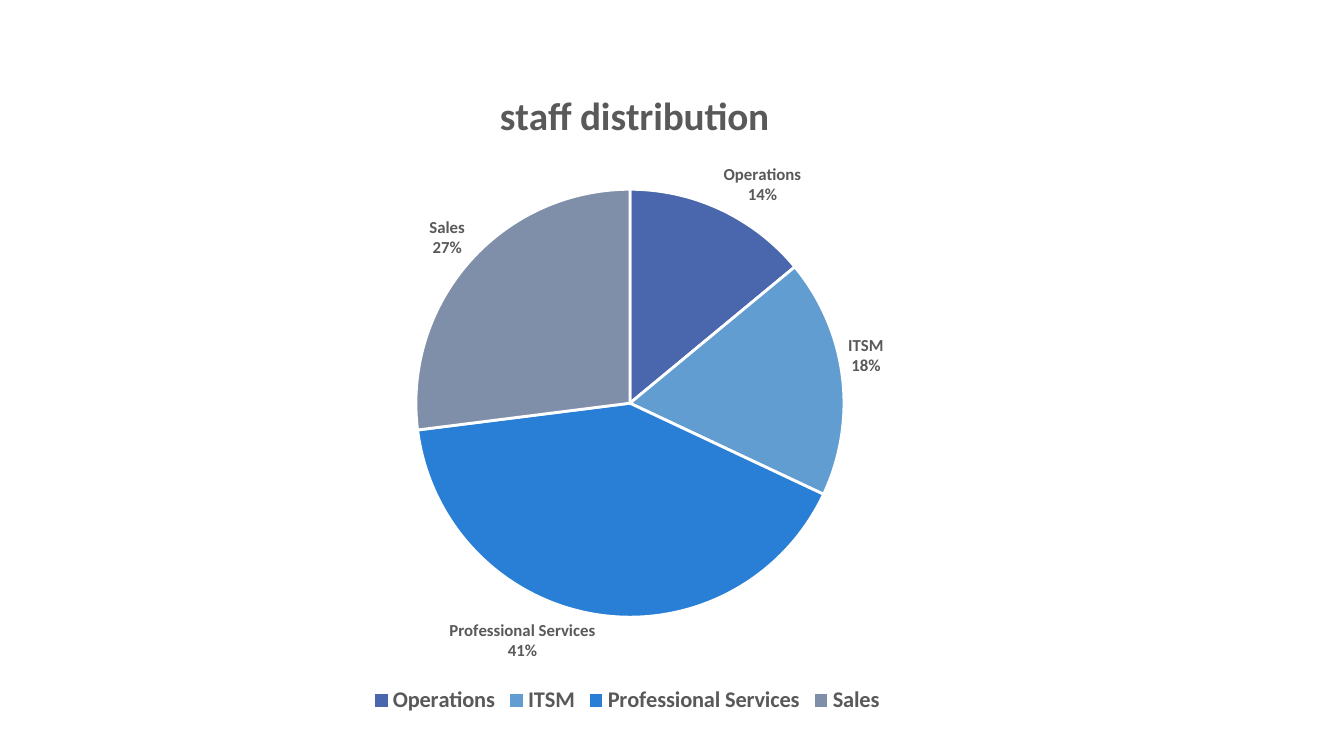
from lxml import etree
from pptx import Presentation
from pptx.chart.data import CategoryChartData
from pptx.dml.color import RGBColor
from pptx.enum.chart import XL_CHART_TYPE, XL_LABEL_POSITION, XL_LEGEND_POSITION
from pptx.oxml.ns import qn
from pptx.util import Inches, Pt

PIE = XL_CHART_TYPE.PIE
OUTSIDE_END = XL_LABEL_POSITION.OUTSIDE_END
BOTTOM = XL_LEGEND_POSITION.BOTTOM

TITLE = "staff distribution"
STAFF = [
    ("Operations", 14, "operations"),
    ("ITSM", 18, "itsm"),
    ("Professional Services", 41, "services"),
    ("Sales", 27, "sales"),
]
COLORS = {
    "operations": "4A66AC",
    "itsm": "629DD1",
    "services": "297FD5",
    "sales": "7F8FA9",
    "text": "595959",
    "white": "FFFFFF",
}
FONT = "Calibri"
SLIDE_WIDTH, SLIDE_HEIGHT = 13.33, 7.5
CHART_LEFT, CHART_TOP, CHART_WIDTH, CHART_HEIGHT = 1.46, 0.48, 9.52, 6.65
PIE_DIAMETER = 4.25
PIE_LEFT, PIE_TOP = 0.28, 0.21  # shares of the chart
TITLE_LEFT, TITLE_TOP = 0.36, 0.05


def color(name):
    return RGBColor.from_string(COLORS[name])


def style_font(font, size, bold=True, color_name="text"):
    font.name = FONT
    font.size = Pt(size)
    font.bold = bold
    font.color.rgb = color(color_name)


def write_title(chart, text, **font_format):
    paragraph = chart.chart_title.text_frame.paragraphs[0]
    run = paragraph.add_run()
    run.text = text
    style_font(run.font, **font_format)


def place(parent, index, **settings):
    """Give a chart part a manual layout, in shares of the chart."""
    for layout in parent.findall(qn("c:layout")):
        parent.remove(layout)
    layout = etree.Element(qn("c:layout"))
    manual = etree.SubElement(layout, qn("c:manualLayout"))
    for name, value in settings.items():
        etree.SubElement(manual, qn(f"c:{name}")).set("val", str(value))
    parent.insert(index, layout)


def label_slices(series):
    labels = series.data_labels
    style_font(labels.font, size=12)
    labels.show_value = False
    labels.show_category_name = True
    labels.show_percentage = True
    labels.position = OUTSIDE_END
    separator = etree.Element(qn("c:separator"))
    separator.text = "\n"
    element = series._element.find(qn("c:dLbls"))
    element.find(qn("c:showBubbleSize")).addnext(separator)


def add_staff_chart(slide):
    data = CategoryChartData()
    data.categories = [name for name, _, _ in STAFF]
    data.add_series("Series 1", [share for _, share, _ in STAFF])
    box = [Inches(n) for n in (CHART_LEFT, CHART_TOP, CHART_WIDTH, CHART_HEIGHT)]
    chart = slide.shapes.add_chart(PIE, *box, data).chart
    style_font(chart.font, size=10, bold=False)

    chart.has_title = True
    write_title(chart, TITLE, size=28)
    place(chart.chart_title._element, 1, xMode="edge", yMode="edge",
          x=TITLE_LEFT, y=TITLE_TOP)

    chart.has_legend = True
    chart.legend.position = BOTTOM
    chart.legend.include_in_layout = False
    style_font(chart.legend.font, size=16)

    plot = chart.plots[0]
    plot.vary_by_categories = True
    series = plot.series[0]
    for index, (_, _, color_name) in enumerate(STAFF):
        slice_format = series.points[index].format
        slice_format.fill.solid()
        slice_format.fill.fore_color.rgb = color(color_name)
        slice_format.line.color.rgb = color("white")
        slice_format.line.width = Pt(2)
    label_slices(series)
    plot_area = chart._chartSpace.find(".//" + qn("c:plotArea"))
    place(plot_area, 0, layoutTarget="inner", xMode="edge", yMode="edge",
          x=PIE_LEFT, y=PIE_TOP,
          w=round(PIE_DIAMETER / CHART_WIDTH, 3),
          h=round(PIE_DIAMETER / CHART_HEIGHT, 3))


def main():
    presentation = Presentation()
    presentation.slide_width = Inches(SLIDE_WIDTH)
    presentation.slide_height = Inches(SLIDE_HEIGHT)
    slide = presentation.slides.add_slide(presentation.slide_layouts[6])
    add_staff_chart(slide)
    presentation.save("out.pptx")


if __name__ == "__main__":
    main()
